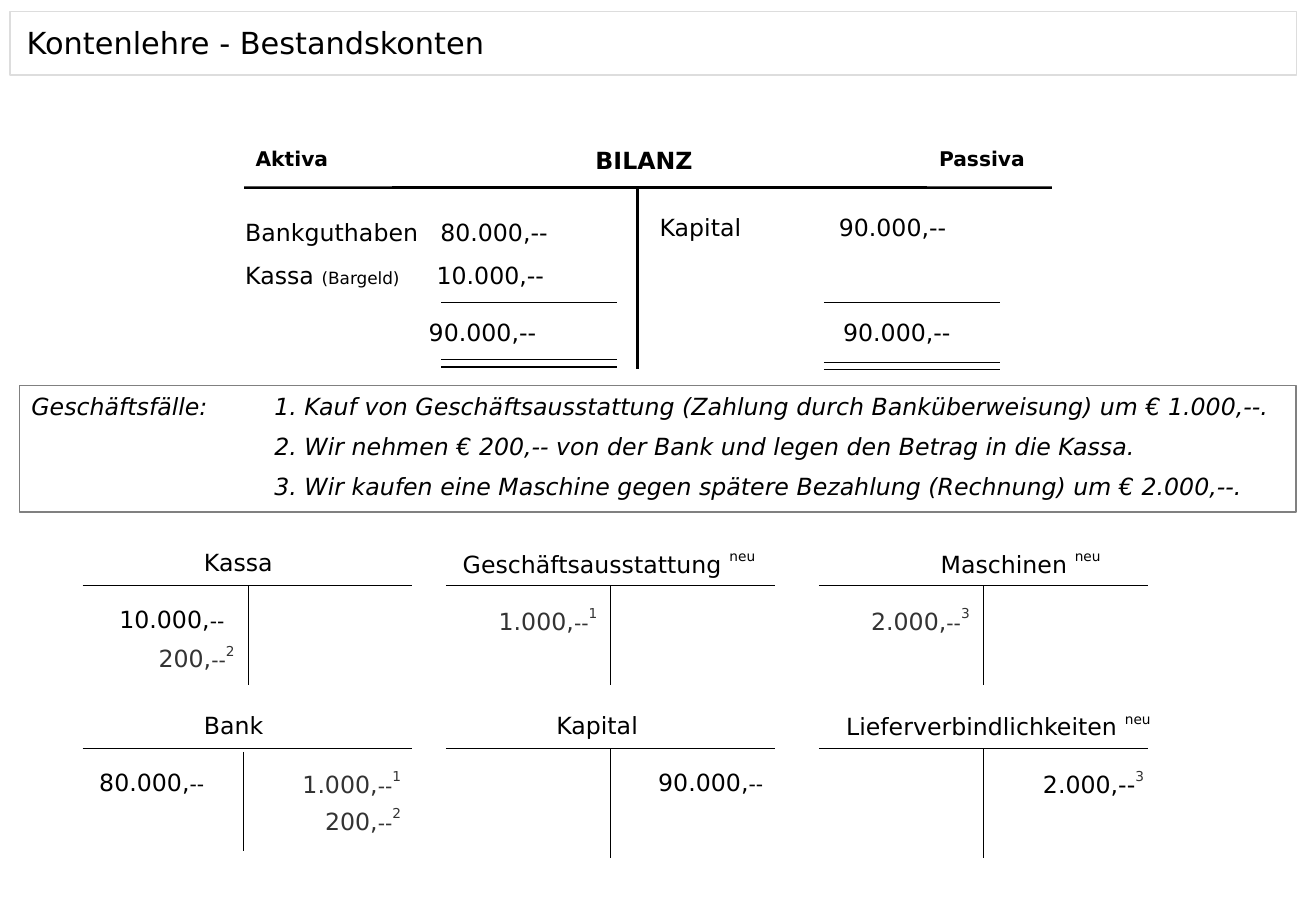
from collections import namedtuple

from lxml import etree
from pptx import Presentation
from pptx.dml.color import RGBColor
from pptx.enum.shapes import MSO_CONNECTOR, MSO_SHAPE
from pptx.enum.text import MSO_ANCHOR, MSO_AUTO_SIZE, PP_ALIGN
from pptx.oxml.ns import qn
from pptx.util import Emu, Inches, Pt

STRAIGHT = MSO_CONNECTOR.STRAIGHT
RECTANGLE = MSO_SHAPE.RECTANGLE
LEFT, CENTER, RIGHT = PP_ALIGN.LEFT, PP_ALIGN.CENTER, PP_ALIGN.RIGHT
TOP = MSO_ANCHOR.TOP
NO_AUTOFIT = MSO_AUTO_SIZE.NONE

UNIT = Inches(0.1)
COLUMNS, ROWS = 108.3, 75
FONT = "DejaVu Sans"
BLACK, DARK, GRAY, PALE, WHITE = "000000", "333333", "808080", "DDDDDD", "FFFFFF"

Run = namedtuple("Run", "text size color raised bold italic",
                 defaults=(14, BLACK, False, False, False))
Name = namedtuple("Name", "text left width is_new alignment", defaults=(False, LEFT))
Stem = namedtuple("Stem", "left top bottom")
Entry = namedtuple("Entry", "right line amount note color dash_size width",
                   defaults=("", BLACK, 12, 12.2))
Account = namedtuple("Account", "left top name stem entries")

ACCOUNT_LEFTS = (6.8, 36.7, 67.4)
ACCOUNT_TOPS = (48.2, 61.6)
ACCOUNT_WIDTH = 27.1
LINE_PITCH = 3.1

ACCOUNTS = [
    Account(ACCOUNT_LEFTS[0], ACCOUNT_TOPS[0], Name("Kassa", 9, 9.5), Stem(13.66, 0, 8.2),
            [Entry(12.65, 0, "10.000,"), Entry(13.5, 1, "200,", "2", DARK)]),
    Account(ACCOUNT_LEFTS[1], ACCOUNT_TOPS[0], Name("Geschäftsausstattung", 0.4, 32.4, True),
            Stem(13.54, 0, 8.2), [Entry(13.45, 0, "1.000,", "1", DARK)]),
    Account(ACCOUNT_LEFTS[2], ACCOUNT_TOPS[0], Name("Maschinen", 0.4, 32.4, True, CENTER),
            Stem(13.54, 0, 8.2), [Entry(13.4, 0, "2.000,", "3", DARK)]),
    Account(ACCOUNT_LEFTS[0], ACCOUNT_TOPS[1], Name("Bank", 9, 9.5), Stem(13.25, 0.3, 8.5),
            [Entry(11, 0, "80.000,"), Entry(27.2, 0, "1.000,", "1", DARK),
             Entry(27.2, 1, "200,", "2", DARK)]),
    Account(ACCOUNT_LEFTS[1], ACCOUNT_TOPS[1], Name("Kapital", 8.1, 13.6), Stem(13.55, 0, 9),
            [Entry(27.1, 0, "90.000,")]),
    Account(ACCOUNT_LEFTS[2], ACCOUNT_TOPS[1], Name("Lieferverbindlichkeiten", 1.25, 36.7, True),
            Stem(13.55, 0, 9), [Entry(27.75, 0, "2.000,", "3", BLACK, 14, 13.7)]),
]

CASES = [
    "Geschäftsfälle:\t1. Kauf von Geschäftsausstattung (Zahlung durch Banküberweisung) um € 1.000,--.",
    "\t2. Wir nehmen € 200,-- von der Bank und legen den Betrag in die Kassa.",
    "\t3. Wir kaufen eine Maschine gegen spätere Bezahlung (Rechnung) um € 2.000,--.",
]


def grid(value):
    """Convert grid units to a length."""
    return Emu(round(value * UNIT))


def rgb(color):
    """Convert a hex string to a colour."""
    return RGBColor.from_string(color)


class LedgerSlide:
    """Draws ledger elements on one slide in a common style."""

    def __init__(self, presentation):
        """Add a title-only slide."""
        self.slide = presentation.slides.add_slide(presentation.slide_layouts[5])

    def fill_text(self, shape, paragraphs, alignment=LEFT, tab=None, space=0):
        """Write paragraphs, each given as a list of runs."""
        frame = shape.text_frame
        frame.word_wrap = True
        frame.auto_size = NO_AUTOFIT
        frame.vertical_anchor = TOP
        for index, runs in enumerate(paragraphs):
            paragraph = frame.add_paragraph() if index else frame.paragraphs[0]
            if tab:
                tabs = etree.SubElement(paragraph._p.get_or_add_pPr(), qn("a:tabLst"))
                etree.SubElement(tabs, qn("a:tab"), pos=str(grid(tab)), algn="l")
            paragraph.alignment = alignment
            if index:
                paragraph.space_before = Pt(space)
            for item in runs:
                run = paragraph.add_run()
                run.text = item.text
                run.font.name = FONT
                run.font.size = Pt(item.size)
                run.font.bold = item.bold
                run.font.italic = item.italic
                run.font.color.rgb = rgb(item.color)
                if item.raised:
                    run._r.get_or_add_rPr().set("baseline", "50000")

    def title(self, text, left, top, width, height):
        """Place the slide title."""
        title = self.slide.shapes.title
        title.left, title.top = grid(left), grid(top)
        title.width, title.height = grid(width), grid(height)
        self.fill_text(title, [[Run(text, 18)]])

    def rectangle(self, left, top, width, height, fill=None, outline=None, weight=0.75):
        """Add a rectangle with an optional fill and outline."""
        shape = self.slide.shapes.add_shape(
            RECTANGLE, grid(left), grid(top), grid(width), grid(height))
        shape.shadow.inherit = False
        if fill:
            shape.fill.solid()
            shape.fill.fore_color.rgb = rgb(fill)
        else:
            shape.fill.background()
        if outline:
            shape.line.color.rgb = rgb(outline)
            shape.line.width = Pt(weight)
        else:
            shape.line.fill.background()
        return shape

    def label(self, runs, left, top, width, height=3.8, alignment=LEFT, tab=None):
        """Add a one-line label on white."""
        self.fill_text(self.rectangle(left, top, width, height, WHITE), [runs], alignment, tab)

    def line(self, left, top, right, bottom, weight=0.75):
        """Add a black straight line."""
        line = self.slide.shapes.add_connector(
            STRAIGHT, grid(left), grid(top), grid(right), grid(bottom))
        line.line.color.rgb = rgb(BLACK)
        line.line.width = Pt(weight)
        etree.SubElement(line._element.spPr, qn("a:effectLst"))

    def account(self, account):
        """Add a T-account with its name and entries."""
        left, top, name, stem = account.left, account.top, account.name, account.stem
        self.line(left, top, left + ACCOUNT_WIDTH, top)
        self.line(left + stem.left, top + stem.top, left + stem.left, top + stem.bottom)
        runs = [Run(name.text)]
        if name.is_new:
            runs = [Run(name.text + " "), Run("neu", raised=True)]
        self.label(runs, left + name.left, top - 3.6, name.width, 3.2, name.alignment)
        for entry in account.entries:
            runs = [Run(entry.amount, color=entry.color),
                    Run("--", entry.dash_size, entry.color)]
            if entry.note:
                runs.append(Run(entry.note, color=DARK, raised=True))
            self.label(runs, left + entry.right - entry.width,
                       top + 1.1 + entry.line * LINE_PITCH, entry.width, alignment=RIGHT)

    def balance(self):
        """Add the balance sheet with both sides and totals."""
        self.line(20.1, 15.4, 86.6, 15.4, 1.75)
        self.line(52.43, 15.4, 52.43, 30.4, 1.75)
        self.label([Run("BILANZ ", bold=True)], 40.5, 11.5, 25.7, alignment=CENTER)
        self.label([Run("Aktiva", 12, bold=True)], 20.05, 11.55, 12.2)
        self.label([Run("Passiva", 12, bold=True)], 76.3, 11.55, 16.6)
        self.label([Run("Bankguthaben\t80.000,--")], 19.2, 17.45, 32.4, 5.1, tab=16.05)
        self.label([Run("Kassa "), Run("(Bargeld)", 10), Run("\t10.000,--")],
                   19.2, 21, 31.6, 4.7, tab=15.75)
        self.label([Run("Kapital\t90.000,--")], 53.3, 17, 39, 5.1, tab=14.75)
        for left, total_left, total_width, double_top in (
                (36.3, 20.1, 29.9, 29.62), (67.8, 54.2, 31.6, 29.82)):
            self.label([Run("\t90.000,--")], total_left, 25.7, total_width, 3.1, tab=14.2)
            for top in (24.9, double_top, double_top + 0.6):
                self.line(left, top, left + 14.5, top)


def main():
    """Build and save the slide."""
    presentation = Presentation()
    presentation.slide_width = grid(COLUMNS)
    presentation.slide_height = grid(ROWS)
    ledger = LedgerSlide(presentation)
    ledger.rectangle(0.8, 0.95, 105.9, 5.25, outline=PALE, weight=1)
    ledger.title("Kontenlehre - Bestandskonten", 1.2, 1.5, 40.2, 4)
    ledger.balance()
    panel = ledger.rectangle(1.6, 31.75, 105.05, 10.4, outline=GRAY)
    ledger.fill_text(panel, [[Run(case, italic=True)] for case in CASES], tab=20, space=7)
    for account in ACCOUNTS:
        ledger.account(account)
    presentation.save("out.pptx")


if __name__ == "__main__":
    main()
